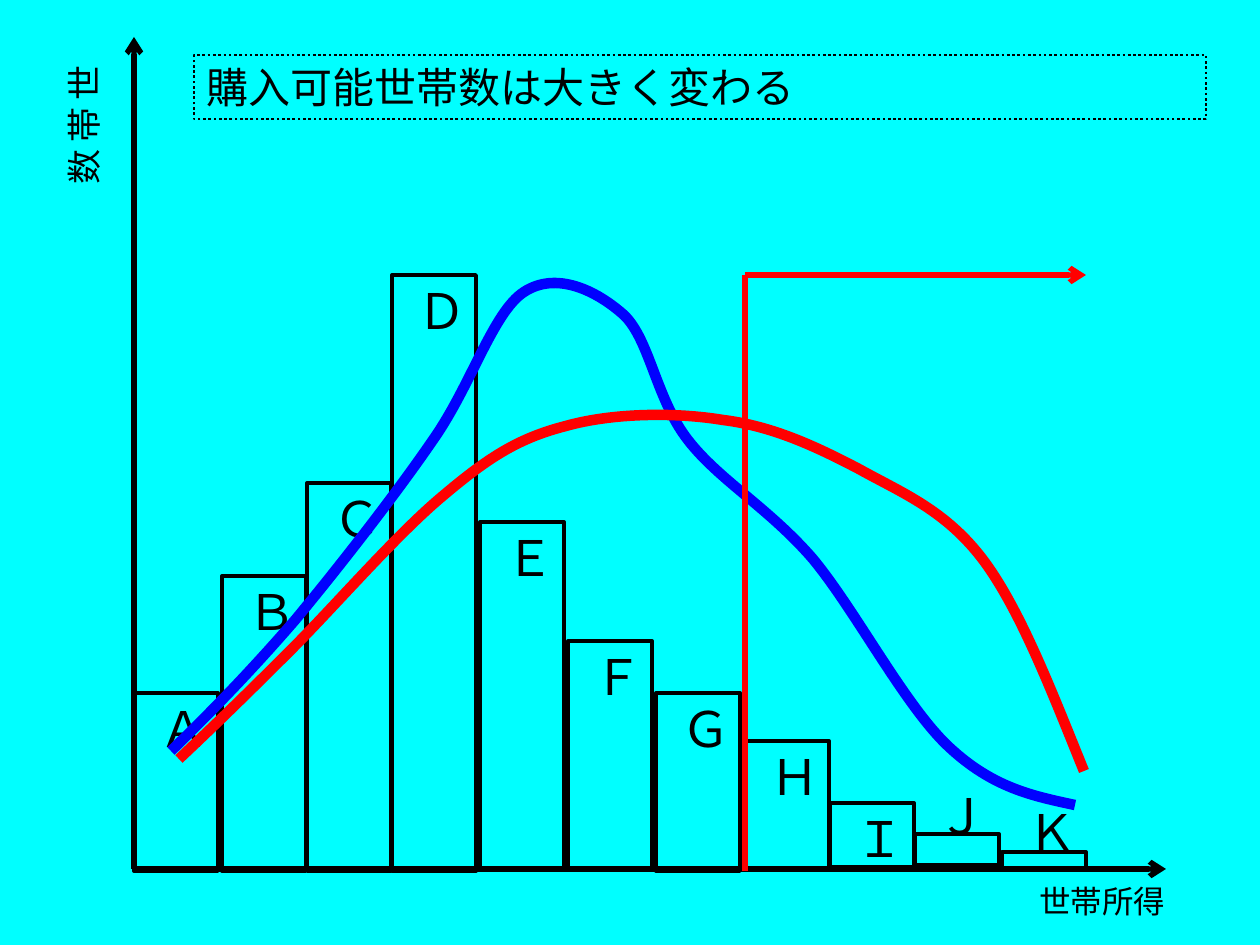
"""Build the slide on income classes and the number of households able to buy."""
from dataclasses import dataclass

from pptx import Presentation
from pptx.dml.color import RGBColor as RGB
from pptx.enum.dml import MSO_LINE as Dash
from pptx.enum.shapes import MSO_CONNECTOR as Connector, MSO_SHAPE as Preset
from pptx.enum.text import MSO_ANCHOR as Anchor, MSO_AUTO_SIZE as AutoSize, PP_ALIGN as Align
from pptx.oxml.ns import qn
from pptx.util import Pt

SCALE = 914400 / 126


@dataclass(frozen=True)
class Theme:
    """Colours, fonts, type sizes and line widths."""
    background: RGB = RGB(0, 255, 255)
    ink: RGB = RGB(0, 0, 0)
    before: RGB = RGB(0, 0, 255)
    after: RGB = RGB(255, 0, 0)
    heading_font: str = "Arial"
    label_font: str = "Calibri"
    title_size: int = 24
    count_size: int = 20
    income_size: int = 18
    class_size: int = 28
    frame_width: float = 1.5
    bar_width: float = 2.25
    axis_width: float = 3
    curve_width: float = 6


THEME = Theme()
BAR_WIDTH = 84
LABEL_HEIGHT = 64
THRESHOLD = 745, 275

CLASSES = [
    ("Ａ", 134, 693, 178), ("Ｂ", 222, 576, 295), ("Ｃ", 307, 483, 388),
    ("Ｄ", 392, 275, 596), ("Ｅ", 480, 522, 348), ("Ｆ", 568, 641, 227),
    ("Ｇ", 656, 693, 178), ("Ｈ", 745, 741, 127), ("Ｉ", 830, 803, 64),
    ("", 915, 834, 31), ("", 1002, 852, 16),
]
LOW_CLASSES = [("Ｊ", 912, 780), ("Ｋ", 1002, 796)]

CURRENT_CURVE = [
    (171, 751),
    (212, 711), (252, 670), (296, 619),
    (339, 567), (396, 494), (433, 440),
    (471, 386), (493, 312), (524, 292),
    (556, 271), (596, 290), (624, 315),
    (650, 340), (656, 399), (688, 440),
    (719, 480), (769, 508), (813, 559),
    (856, 611), (905, 706), (949, 747),
    (993, 788), (1033, 796), (1075, 805),
]
SHIFTED_CURVE = [
    (179, 759),
    (213, 727), (247, 694), (291, 650),
    (335, 606), (398, 533), (444, 495),
    (489, 457), (519, 438), (566, 426),
    (612, 413), (675, 412), (723, 420),
    (772, 426), (815, 446), (859, 469),
    (902, 493), (946, 510), (984, 561),
    (1021, 611), (1052, 692), (1084, 771),
]


def px(*lengths):
    """Turn pixel lengths into EMU."""
    return [round(length * SCALE) for length in lengths]


def apply(target, values):
    """Set each named attribute of the target."""
    for name, value in values.items():
        setattr(target, name, value)


def style_line(line, color, width, dash=None):
    """Give a line its colour, width and dash."""
    line.color.rgb = color
    apply(line, {"width": Pt(width), "dash_style": dash})


def write(holder, wording, font, size, vertical=False, anchor=Anchor.TOP):
    """Write one left-aligned paragraph, upright or in vertical columns."""
    frame = holder.text_frame
    apply(frame, {"word_wrap": True, "auto_size": AutoSize.NONE, "vertical_anchor": anchor})
    if vertical:
        frame._txBody.bodyPr.set("vert", "eaVert")
    paragraph = frame.paragraphs[0]
    paragraph.alignment = Align.LEFT
    run = paragraph.add_run()
    run.text = wording
    apply(run.font, {"name": font, "size": Pt(size)})
    run.font.color.rgb = THEME.ink


def add_title(slide, wording, place):
    """Place the title in its dotted frame."""
    title = slide.shapes.title
    apply(title, dict(zip(("left", "top", "width", "height"), px(*place))))
    style_line(title.line, THEME.ink, THEME.frame_width, Dash.ROUND_DOT)
    write(title, wording, THEME.heading_font, THEME.title_size, anchor=Anchor.MIDDLE)


def add_label(slide, wording, place, font, size, vertical=False, rotation=0):
    """Add a text box."""
    label = slide.shapes.add_textbox(*px(*place))
    label.rotation = rotation
    write(label, wording, font, size, vertical)


def add_bar(slide, income_class, left, top, height):
    """Add the outlined bar of one income class."""
    bar = slide.shapes.add_shape(Preset.RECTANGLE, *px(left, top, BAR_WIDTH, height))
    bar.shadow.inherit = False
    bar.fill.background()
    style_line(bar.line, THEME.ink, THEME.bar_width)
    if income_class:
        write(bar, income_class, THEME.label_font, THEME.class_size, vertical=True)


def add_curve(slide, points, color):
    """Draw a start point and triples of Bezier points as one open curve."""
    builder = slide.shapes.build_freeform(*points[0], scale=SCALE)
    builder.add_line_segments(points[1:], close=False)
    curve = builder.convert_to_shape()
    curve.shadow.inherit = False
    curve.fill.background()
    style_line(curve.line, color, THEME.curve_width)
    route = curve._element.find(".//" + qn("a:path"))
    steps = route.findall(qn("a:lnTo"))
    for start in range(0, len(steps), 3):
        bend = route.makeelement(qn("a:cubicBezTo"), {})
        route.append(bend)
        for step in steps[start:start + 3]:
            bend.append(step[0])
            route.remove(step)


def add_rule(slide, start, end, color, arrow=False):
    """Add a straight line, with an arrowhead at its end if wanted."""
    rule = slide.shapes.add_connector(Connector.STRAIGHT, *px(*start, *end))
    style_line(rule.line, color, THEME.axis_width)
    properties = rule._element.spPr
    properties.append(properties.makeelement(qn("a:effectLst"), {}))
    if arrow:
        outline = rule.line._get_or_add_ln()
        outline.append(outline.makeelement(qn("a:tailEnd"), {"type": "arrow"}))


def main():
    """Build and save the slide."""
    deck = Presentation()
    deck.slide_width, deck.slide_height = px(1260, 945)
    slide = deck.slides.add_slide(deck.slide_layouts[5])
    slide.background.fill.solid()
    slide.background.fill.fore_color.rgb = THEME.background

    origin = 134, 869
    for end in ((1166, 869), (134, 37)):
        add_rule(slide, origin, end, THEME.ink, arrow=True)
    add_label(slide, "世帯数", (6, 105, 152, 55), THEME.heading_font,
              THEME.count_size, vertical=True, rotation=270)
    add_label(slide, "世帯所得", (1027, 876, 159, 55), THEME.label_font, THEME.income_size)
    add_title(slide, "購入可能世帯数は大きく変わる", (194, 55, 1012, 64))

    for income_class in CLASSES:
        add_bar(slide, *income_class)
    for wording, left, top in LOW_CLASSES:
        add_label(slide, wording, (left, top, BAR_WIDTH, LABEL_HEIGHT),
                  THEME.label_font, THEME.class_size, vertical=True)

    add_curve(slide, CURRENT_CURVE, THEME.before)
    add_curve(slide, SHIFTED_CURVE, THEME.after)
    add_rule(slide, THRESHOLD, (745, 871), THEME.after)
    add_rule(slide, THRESHOLD, (1086, 275), THEME.after, arrow=True)
    deck.save("out.pptx")


if __name__ == "__main__":
    main()
